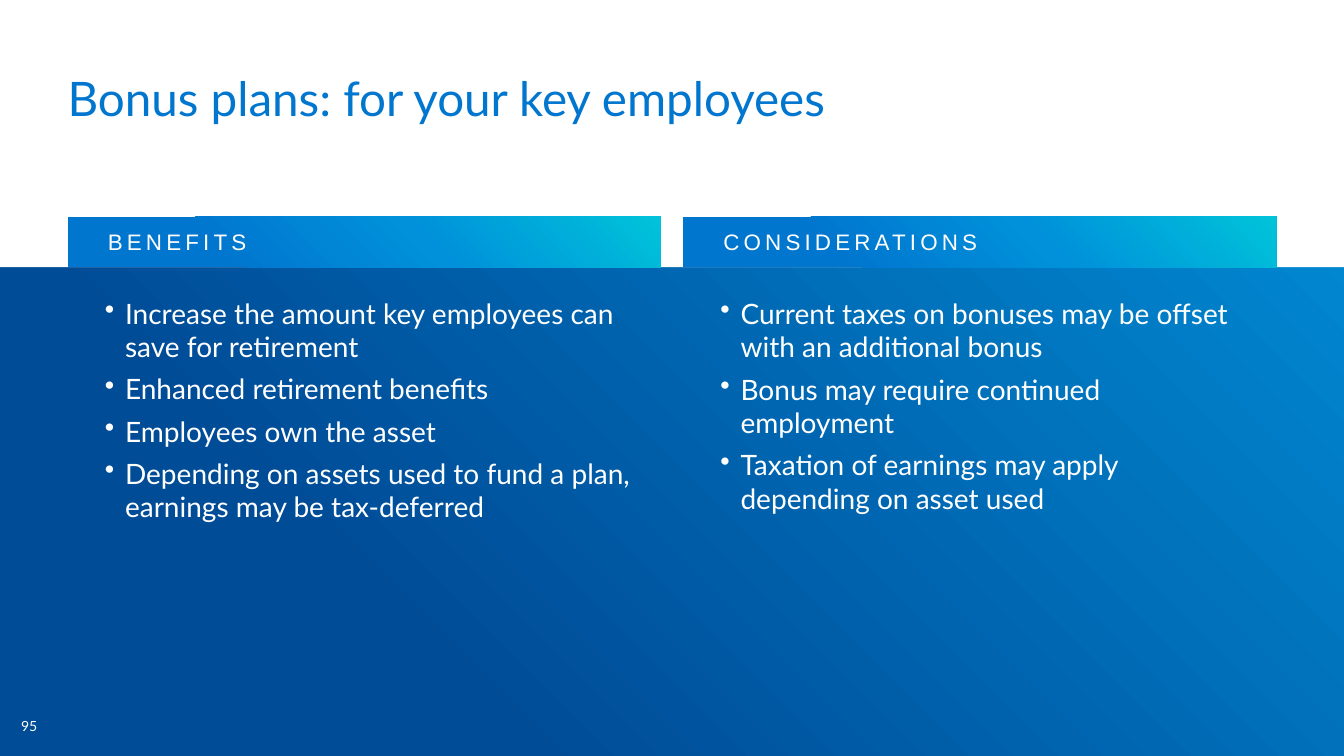
from copy import deepcopy
from dataclasses import dataclass

from lxml.etree import SubElement
from pptx import Presentation
from pptx.dml.color import RGBColor as Rgb
from pptx.enum.shapes import MSO_SHAPE as Shape
from pptx.enum.text import MSO_ANCHOR as Anchor, PP_ALIGN as Align
from pptx.oxml.ns import qn
from pptx.util import Inches, Pt


@dataclass(frozen=True)
class Theme:
    white: Rgb = Rgb.from_string("FFFFFF")
    title: Rgb = Rgb.from_string("0076CF")
    backdrop: tuple = ((0.25, "004C97"), (0.99, "0091DA"))
    header: tuple = ((0.25, "0076CF"), (0.6, "0091DA"), (1, "00C3D9"))
    font: str = "Lato"
    header_font: str = "Arial"
    title_size: Pt = Pt(34)
    body_size: Pt = Pt(20)
    header_size: Pt = Pt(16)
    number_size: Pt = Pt(10)


theme = Theme()
WIDTH, HEIGHT = 13.33, 7.5
MARGIN, GAP = 0.67, 0.22
COLUMN = (WIDTH - 2 * MARGIN - GAP) / 2
HEADER_HEIGHT, BAND_BOTTOM = 0.5, 2.65
TEXT_INDENT, TEXT_TOP = 0.37, 2.94

# heading, text width, text height, right inset, bullets
columns = [
    ("BENEFITS", 5.52, 3.74, 0.3, [
        "Increase the amount key employees can save for retirement",
        "Enhanced retirement benefits",
        "Employees own the asset",
        "Depending on assets used to fund a plan, earnings may be tax-deferred",
    ]),
    ("CONSIDERATIONS", 5.15, 3.49, 0, [
        "Current taxes on bonuses may be offset with an additional bonus",
        "Bonus may require continued employment",
        "Taxation of earnings may apply depending on asset used",
    ]),
]

prs = Presentation()
prs.slide_width, prs.slide_height = Inches(WIDTH), Inches(HEIGHT)
slide = prs.slides.add_slide(prs.slide_layouts[6])


def add_panel(left, top, width, height, stops):
    """Add a borderless rectangle; several stops blend towards the upper right."""
    panel = slide.shapes.add_shape(
        Shape.RECTANGLE, *map(Inches, (left, top, width, height)))
    panel.shadow.inherit = False
    panel.line.fill.background()
    if len(stops) == 1:
        panel.fill.solid()
        panel.fill.fore_color.rgb = stops[0]
        return panel
    panel.fill.gradient()
    panel.fill.gradient_angle = 45
    stop_list = panel._element.spPr.find(".//" + qn("a:gsLst"))
    while len(stop_list) < len(stops):
        stop_list.append(deepcopy(stop_list[0]))
    for stop, (position, colour) in zip(panel.fill.gradient_stops, stops):
        stop.position = position
        stop.color.rgb = Rgb.from_string(colour)
    return panel


def add_copy(left, top, width, height, lines, size, colour, right_inset=0):
    """Add a wrapped text box with one paragraph per line."""
    box = slide.shapes.add_textbox(*map(Inches, (left, top, width, height)))
    frame = box.text_frame
    frame.word_wrap = True
    frame.margin_left = frame.margin_top = frame.margin_bottom = 0
    frame.margin_right = Inches(right_inset)
    frame.text = "\n".join(lines)
    for paragraph in frame.paragraphs:
        paragraph.font.name = theme.font
        paragraph.font.size = size
        paragraph.font.color.rgb = colour
    return frame


add_panel(0, 0, WIDTH, HEIGHT, theme.backdrop)
add_panel(0, 0, WIDTH, BAND_BOTTOM, [theme.white])
page_number = add_copy(0.21, 6.88, 0.46, 0.41, ["95"],
                       theme.number_size, theme.white)
page_number.vertical_anchor = Anchor.BOTTOM
add_copy(MARGIN, 0.68, WIDTH - 2 * MARGIN, 0.5,
         ["Bonus plans: for your key employees"], theme.title_size, theme.title)

for index, (heading, width, height, right_inset, bullets) in enumerate(columns):
    left = MARGIN + index * (COLUMN + GAP)
    header = add_panel(left, BAND_BOTTOM - HEADER_HEIGHT, COLUMN, HEADER_HEIGHT,
                       theme.header).text_frame
    header.margin_left = header.margin_right = Inches(0.4)
    header.vertical_anchor = Anchor.MIDDLE
    header.text = heading
    label = header.paragraphs[0]
    label.alignment = Align.LEFT
    label.font.name = theme.header_font
    label.font.size = theme.header_size
    label.font.color.rgb = theme.white
    label.runs[0].font._element.set("spc", "300")

    body = add_copy(left + TEXT_INDENT, TEXT_TOP, width, height, bullets,
                    theme.body_size, theme.white, right_inset)
    for position, paragraph in enumerate(body.paragraphs):
        properties = paragraph._p.get_or_add_pPr()
        properties.set("marL", str(Inches(0.2)))
        properties.set("indent", str(-Inches(0.2)))
        bullet = SubElement(properties, qn("a:buChar"), char="•")
        properties.find(qn("a:defRPr")).addprevious(bullet)
        if position:
            paragraph.space_before = Pt(6)

prs.save("out.pptx")
